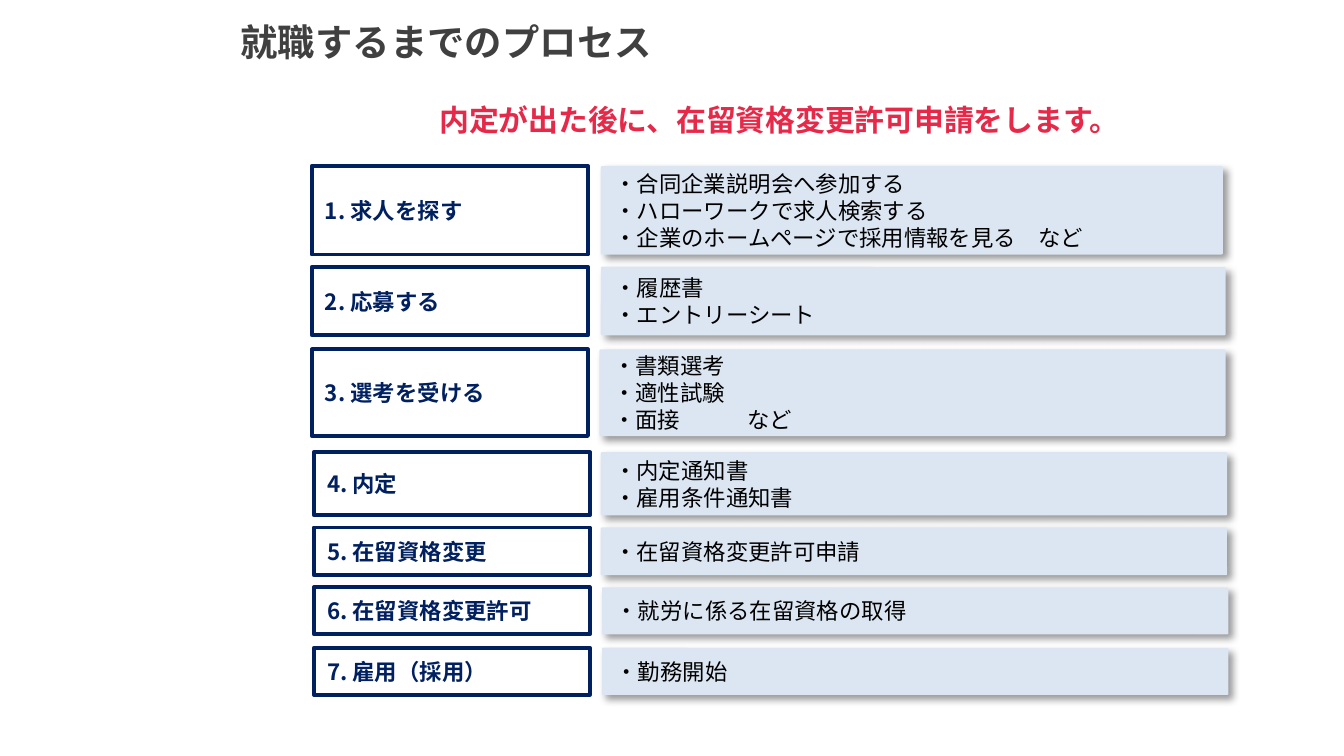
from lxml import etree
from pptx import Presentation
from pptx.dml.color import RGBColor
from pptx.enum.shapes import MSO_SHAPE
from pptx.enum.text import MSO_ANCHOR, PP_ALIGN
from pptx.oxml.ns import qn
from pptx.util import Pt

RECT = MSO_SHAPE.RECTANGLE
ROUND = MSO_SHAPE.ROUNDED_RECTANGLE
MIDDLE = MSO_ANCHOR.MIDDLE
LEFT = PP_ALIGN.LEFT
PX = 4572
FONT = "Noto Sans CJK JP"
NAVY = "002060"


def color(code):
    return RGBColor.from_string(code)


def write(shape, lines, size, code, bold):
    frame = shape.text_frame
    frame.word_wrap = True
    frame.vertical_anchor = MIDDLE
    for i, line in enumerate(lines):
        para = frame.paragraphs[0] if i == 0 else frame.add_paragraph()
        if "\t" in line:
            tabs = etree.SubElement(para._p.get_or_add_pPr(), qn("a:tabLst"))
            etree.SubElement(tabs, qn("a:tab"), pos=str(200 * PX), algn="l")
        para.alignment = LEFT
        para.space_before = Pt(0)
        para.line_spacing = Pt(size * 1.2)
        run = para.add_run()
        run.text = line
        run.font.size = Pt(size)
        run.font.bold = bold
        run.font.name = FONT
        run.font.color.rgb = color(code)
        etree.SubElement(run._r.get_or_add_rPr(), qn("a:ea"), typeface=FONT)


deck = Presentation()
deck.slide_width = 2000 * PX
deck.slide_height = 1125 * PX
slide = deck.slides.add_slide(deck.slide_layouts[5])
shapes = slide.shapes

title = shapes.title
title.left, title.top = 338 * PX, -4 * PX
title.width, title.height = 1646 * PX, 132 * PX
write(title, ["就職するまでのプロセス"], 20, "404040", True)

lead = shapes.add_textbox(634 * PX, 127 * PX, 1056 * PX, 102 * PX)
write(lead, ["内定が出た後に、在留資格変更許可申請をします。"], 16, "E62949", True)

steps = [
    (464, 894, 247, 926, 132, "求人を探す",
     ["合同企業説明会へ参加する", "ハローワークで求人検索する",
      "企業のホームページで採用情報を見る　など"]),
    (464, 894, 397, 930, 102, "応募する", ["履歴書", "エントリーシート"]),
    (464, 892, 520, 932, 129, "選考を受ける",
     ["書類選考", "適性試験", "面接\tなど"]),
    (467, 894, 673, 932, 94, "内定", ["内定通知書", "雇用条件通知書"]),
    (467, 894, 785, 932, 71, "在留資格変更", ["在留資格変更許可申請"]),
    (467, 896, 874, 932, 70, "在留資格変更許可", ["就労に係る在留資格の取得"]),
    (467, 896, 964, 932, 70, "雇用（採用）", ["勤務開始"]),
]

for num, (x, side, y, wide, high, name, items) in enumerate(steps, 1):
    step = shapes.add_shape(RECT, x * PX, y * PX, 411 * PX, high * PX)
    step.shadow.inherit = False
    step.fill.solid()
    step.fill.fore_color.rgb = color("FFFFFF")
    step.line.color.rgb = color(NAVY)
    step.line.width = Pt(2)
    write(step, [f"{num}. {name}"], 12, NAVY, True)

    panel = shapes.add_shape(ROUND, side * PX, y * PX, wide * PX, high * PX)
    panel.adjustments[0] = 0.02
    panel.fill.solid()
    panel.fill.fore_color.rgb = color("DCE6F2")
    panel.line.fill.background()
    panel.shadow.inherit = False
    effect = panel._element.spPr.find(qn("a:effectLst"))
    shade = etree.SubElement(effect, qn("a:outerShdw"), blurRad=str(Pt(4)),
                             dist=str(Pt(3)), dir="2700000", algn="tl",
                             rotWithShape="0")
    tint = etree.SubElement(shade, qn("a:srgbClr"), val="000000")
    etree.SubElement(tint, qn("a:alpha"), val="40000")
    write(panel, ["・" + item for item in items], 12, "000000", False)

deck.save("out.pptx")
